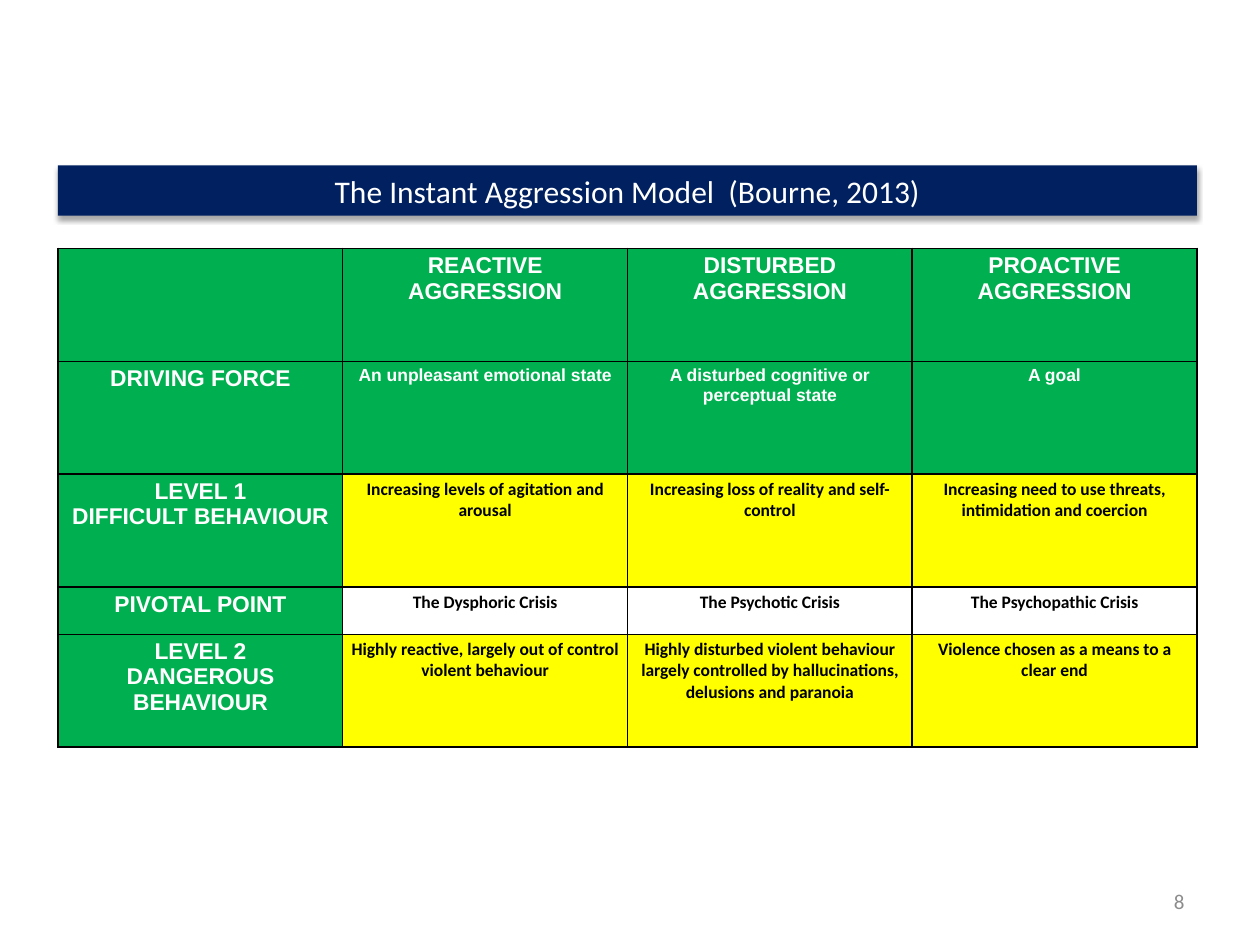
"""Build the slide that tabulates the Instant Aggression Model."""
import dataclasses

import pptx
import pptx.dml.color
import pptx.enum.text
import pptx.oxml
import pptx.oxml.ns
import pptx.util

Pt = pptx.util.Pt
Align = pptx.enum.text.PP_ALIGN
Anchor = pptx.enum.text.MSO_ANCHOR


@dataclasses.dataclass(frozen=True)
class Theme:
    navy: str = "002060"
    green: str = "00B050"
    yellow: str = "FFFF00"
    white: str = "FFFFFF"
    black: str = "000000"
    grey: str = "8C8C8C"
    heading_font: str = "Arial"
    body_font: str = "Calibri"
    title_size: int = 18
    heading_size: int = 13
    number_size: int = 12
    body_size: int = 10


theme = Theme()


def write(frame, text, *, size, color, font=theme.body_font, bold=False,
          align=Align.CENTER, anchor=Anchor.TOP):
    frame.word_wrap = True
    frame.vertical_anchor = anchor
    frame.text = text
    for para in frame.paragraphs:
        para.alignment = align
        for span in para.runs:
            span.font.name = font
            span.font.size = Pt(size)
            span.font.bold = bold
            span.font.color.rgb = pptx.dml.color.RGBColor.from_string(color)


def paint(fill, color):
    fill.solid()
    fill.fore_color.rgb = pptx.dml.color.RGBColor.from_string(color)


namespace = pptx.oxml.ns.nsdecls("a")
left, width = 33.12, 650.88
row_heights = [64.5, 64.5, 64.5, 27, 64.5]
row_colors = [theme.green, theme.green, theme.yellow, theme.white, theme.yellow]
rows = [
    ["", "REACTIVE AGGRESSION", "DISTURBED AGGRESSION", "PROACTIVE AGGRESSION"],
    ["DRIVING FORCE", "An unpleasant emotional state",
     "A disturbed cognitive or perceptual state", "A goal"],
    ["LEVEL 1\nDIFFICULT BEHAVIOUR", "Increasing levels of agitation and arousal",
     "Increasing loss of reality and self-control",
     "Increasing need to use threats, intimidation and coercion"],
    ["PIVOTAL POINT", "The Dysphoric Crisis", "The Psychotic Crisis",
     "The Psychopathic Crisis"],
    ["LEVEL 2\nDANGEROUS BEHAVIOUR",
     "Highly reactive, largely out of control violent behaviour",
     "Highly disturbed violent behaviour largely controlled by hallucinations, "
     "delusions and paranoia",
     "Violence chosen as a means to a clear end"],
]

deck = pptx.Presentation()
deck.slide_width, deck.slide_height = Pt(720), Pt(540)
page = deck.slides.add_slide(deck.slide_layouts[5])

table = page.shapes.add_table(len(rows), len(rows[0]), Pt(left), Pt(142),
                              Pt(width), Pt(sum(row_heights))).table
table.first_row = table.horz_banding = False
for column in table.columns:
    column.width = Pt(width / len(rows[0]))

for row_index, texts in enumerate(rows):
    table.rows[row_index].height = Pt(row_heights[row_index])
    for column_index, text in enumerate(texts):
        cell = table.cell(row_index, column_index)
        cell.margin_left = cell.margin_right = Pt(5)
        cell.margin_top = cell.margin_bottom = Pt(2.7)
        is_heading = row_index == 0 or column_index == 0
        on_green = is_heading or row_index == 1
        if text:
            write(cell.text_frame, text, bold=True,
                  size=theme.heading_size if is_heading else theme.body_size,
                  font=theme.heading_font if on_green else theme.body_font,
                  color=theme.white if on_green else theme.black)
        properties = cell._tc.get_or_add_tcPr()
        for side in ("lnL", "lnR", "lnT", "lnB"):
            properties.append(pptx.oxml.parse_xml(
                f'<a:{side} {namespace} w="{Pt(1)}"><a:solidFill>'
                f'<a:srgbClr val="{theme.black}"/></a:solidFill></a:{side}>'))
        paint(cell.fill, theme.green if on_green else row_colors[row_index])

title = page.shapes.title
title.left, title.top, title.width, title.height = Pt(left), Pt(94.5), Pt(width), Pt(28.8)
paint(title.fill, theme.navy)
title.line.fill.background()
title.text_frame.auto_size = pptx.enum.text.MSO_AUTO_SIZE.NONE
write(title.text_frame, "The Instant Aggression Model  (Bourne, 2013)",
      size=theme.title_size, color=theme.white)
title._element.spPr.append(pptx.oxml.parse_xml(
    f'<a:effectLst {namespace}><a:outerShdw blurRad="{Pt(3.1)}" dist="{Pt(1.8)}" '
    f'dir="5400000" rotWithShape="0"><a:srgbClr val="{theme.black}">'
    '<a:alpha val="35000"/></a:srgbClr></a:outerShdw></a:effectLst>'))

number_box = page.shapes.add_textbox(Pt(516), Pt(500.5), Pt(168), Pt(28.8))
write(number_box.text_frame, "8", size=theme.number_size, color=theme.grey,
      align=Align.RIGHT, anchor=Anchor.MIDDLE)

deck.save("out.pptx")
